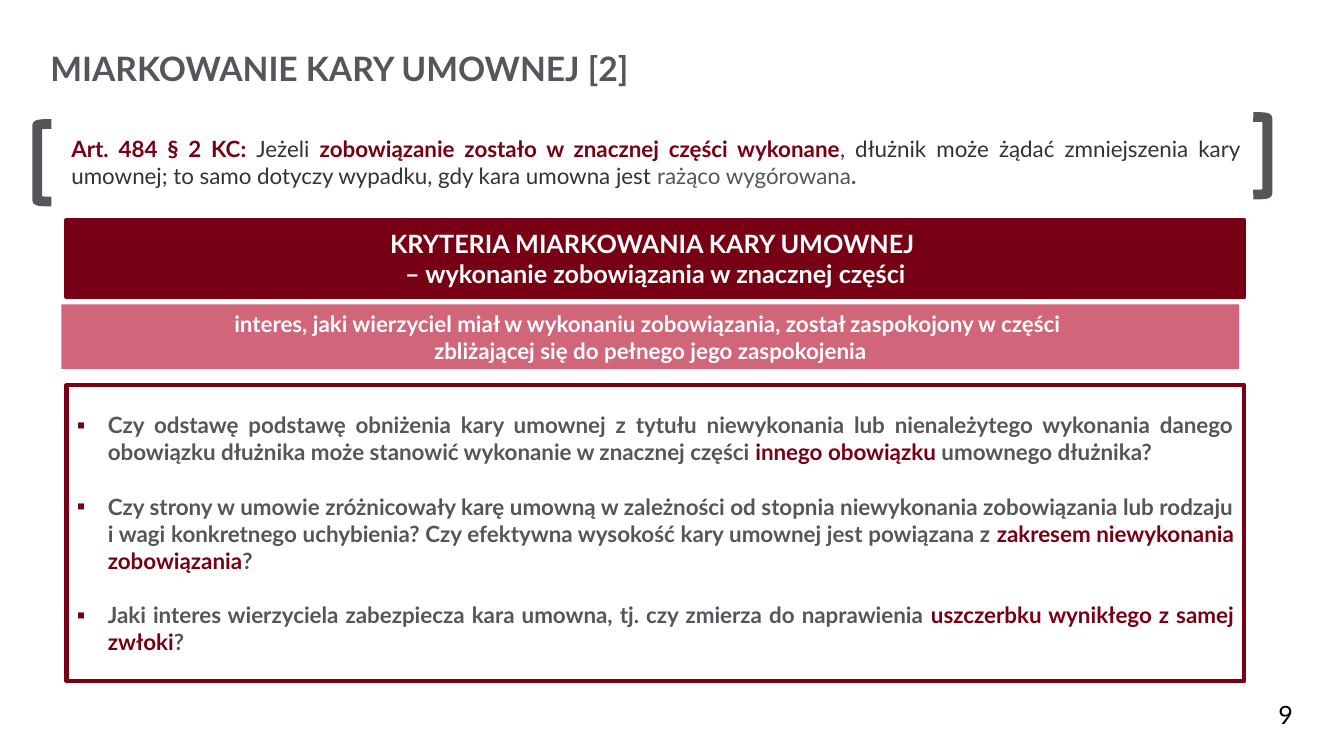
"""Build the slide on reducing a contractual penalty."""
from lxml import etree
from pptx import Presentation
from pptx.dml.color import RGBColor
from pptx.enum.shapes import MSO_SHAPE
from pptx.enum.text import MSO_ANCHOR, MSO_AUTO_SIZE, PP_ALIGN
from pptx.oxml.ns import qn
from pptx.util import Pt

RECTANGLE, BRACKET = MSO_SHAPE.RECTANGLE, MSO_SHAPE.LEFT_BRACKET
TOP, MIDDLE = MSO_ANCHOR.TOP, MSO_ANCHOR.MIDDLE
LEFT, CENTER, JUSTIFY = PP_ALIGN.LEFT, PP_ALIGN.CENTER, PP_ALIGN.JUSTIFY
FIXED = MSO_AUTO_SIZE.NONE

MAROON = RGBColor(0x77, 0x00, 0x14)
ROSE = RGBColor(0xD1, 0x65, 0x7A)
GRAY = RGBColor(0x53, 0x56, 0x5A)
DARK = RGBColor(0x33, 0x33, 0x33)
WHITE = RGBColor(0xFF, 0xFF, 0xFF)
BLACK = RGBColor(0x00, 0x00, 0x00)

FONT = "Lato"
EMU_PER_PX = 9144

ARTICLE = [
    ("Art. 484 § 2 KC: ", MAROON, True),
    ("Jeżeli ", DARK, False),
    ("zobowiązanie zostało w znacznej części wykonane", MAROON, True),
    (", dłużnik może żądać zmniejszenia kary umownej; to samo dotyczy wypadku, "
     "gdy kara umowna jest ", DARK, False),
    ("rażąco wygórowana", GRAY, False),
    (".", GRAY, True),
]
CRITERIA = ["KRYTERIA MIARKOWANIA KARY UMOWNEJ ",
            "– wykonanie zobowiązania w znacznej części"]
INTEREST = ["interes, jaki wierzyciel miał w wykonaniu zobowiązania, "
            "został zaspokojony w części ",
            "zbliżającej się do pełnego jego zaspokojenia"]
QUESTIONS = [
    ("Czy odstawę podstawę obniżenia kary umownej z tytułu niewykonania lub "
     "nienależytego wykonania danego obowiązku dłużnika może stanowić wykonanie "
     "w znacznej części ", "innego obowiązku ", "umownego dłużnika?"),
    ("Czy strony w umowie zróżnicowały karę umowną w zależności od stopnia "
     "niewykonania zobowiązania lub rodzaju i wagi konkretnego uchybienia? "
     "Czy efektywna wysokość kary umownej jest powiązana z ",
     "zakresem niewykonania zobowiązania", "?"),
    ("Jaki interes wierzyciela zabezpiecza kara umowna, tj. czy zmierza do "
     "naprawienia ", "uszczerbku wynikłego z samej zwłoki", "?"),
]


def px(length):
    """Turn px into EMU."""
    return length * EMU_PER_PX


def place(shape, box):
    """Move a shape to a box given in px."""
    shape.left, shape.top, shape.width, shape.height = map(px, box)


def add_run(paragraph, text, size, color, bold):
    """Append one formatted run."""
    run = paragraph.add_run()
    run.text = text
    run.font.name, run.font.size, run.font.bold = FONT, Pt(size), bold
    run.font.color.rgb = color


def set_frame(shape, anchor):
    """Prepare a wrapping frame of fixed size and return it."""
    frame = shape.text_frame
    frame.word_wrap, frame.auto_size = True, FIXED
    frame.vertical_anchor = anchor
    return frame


def add_bullet(paragraph):
    """Give a paragraph a maroon square bullet with a hanging indent."""
    properties = paragraph._p.get_or_add_pPr()
    properties.set("marL", str(px(31)))
    properties.set("indent", str(px(-31)))
    color = etree.SubElement(properties, qn("a:buClr"))
    etree.SubElement(color, qn("a:srgbClr"), val=str(MAROON))
    etree.SubElement(properties, qn("a:buFont"), typeface=FONT)
    etree.SubElement(properties, qn("a:buChar"), char="▪")


def add_title(slide, box):
    """Fill the title placeholder."""
    title = slide.shapes.title
    place(title, box)
    frame = set_frame(title, TOP)
    frame.margin_left = frame.margin_top = 0
    frame.margin_right = frame.margin_bottom = 0
    paragraph = frame.paragraphs[0]
    paragraph.alignment = LEFT
    add_run(paragraph, "MIARKOWANIE KARY UMOWNEJ [2]", 24, GRAY, True)


def add_text(slide, box, runs, size, alignment):
    """Add a one-paragraph text box."""
    text_box = slide.shapes.add_textbox(*map(px, box))
    paragraph = set_frame(text_box, TOP).paragraphs[0]
    paragraph.alignment = alignment
    for text, color, bold in runs:
        add_run(paragraph, text, size, color, bold)


def add_bracket(slide, box, rotation):
    """Add a thick gray bracket."""
    bracket = slide.shapes.add_shape(BRACKET, *map(px, box))
    bracket.shadow.inherit = False
    bracket.rotation = rotation
    bracket.fill.background()
    bracket.line.color.rgb, bracket.line.width = GRAY, Pt(7)


def add_article(slide, box):
    """Add the quoted provision between its two brackets."""
    left, top, width, height = box
    add_text(slide, box, ARTICLE, 16, JUSTIFY)
    add_bracket(slide, (left + width + 3, top - 13, 14, 77), 180)
    add_bracket(slide, (left - 24, top - 6, 14, 77), 0)


def add_banner(slide, box, lines, size, fill, outlined):
    """Add a filled band with centred white lines."""
    banner = slide.shapes.add_shape(RECTANGLE, *map(px, box))
    banner.shadow.inherit = False
    banner.fill.solid()
    banner.fill.fore_color.rgb = fill
    if outlined:
        banner.line.color.rgb, banner.line.width = fill, Pt(3)
    else:
        banner.line.fill.background()
    paragraph = set_frame(banner, MIDDLE).paragraphs[0]
    paragraph.alignment = CENTER
    for index, line in enumerate(lines):
        if index:
            paragraph.add_line_break()
        add_run(paragraph, line, size, WHITE, True)


def add_questions(slide, box):
    """Fill the body placeholder with the framed list of questions."""
    body = slide.placeholders[1]
    place(body, box)
    body.line.color.rgb, body.line.width = MAROON, Pt(3)
    frame = set_frame(body, MIDDLE)
    for index, (opening, emphasis, ending) in enumerate(QUESTIONS):
        paragraph = frame.add_paragraph() if index else frame.paragraphs[0]
        add_bullet(paragraph)
        paragraph.alignment = JUSTIFY
        paragraph.space_before = Pt(12 if index else 0)
        paragraph.space_after = Pt(8)
        for text, color in ((opening, GRAY), (emphasis, MAROON), (ending, GRAY)):
            add_run(paragraph, text, 16, color, True)


def main():
    """Build and save the slide."""
    deck = Presentation()
    deck.slide_width, deck.slide_height = px(1333), px(750)
    slide = deck.slides.add_slide(deck.slide_layouts[1])
    add_title(slide, (50, 48, 1058, 40))
    add_article(slide, (61, 129, 1179, 64))
    add_banner(slide, (66, 218, 1168, 77), CRITERIA, 18, MAROON, True)
    add_banner(slide, (61, 302, 1168, 64), INTEREST, 16, ROSE, False)
    add_questions(slide, (66, 382, 1168, 294))
    add_text(slide, (1258, 689, 57, 36), [("9", BLACK, False)], 18, LEFT)
    deck.save("out.pptx")


if __name__ == "__main__":
    main()
